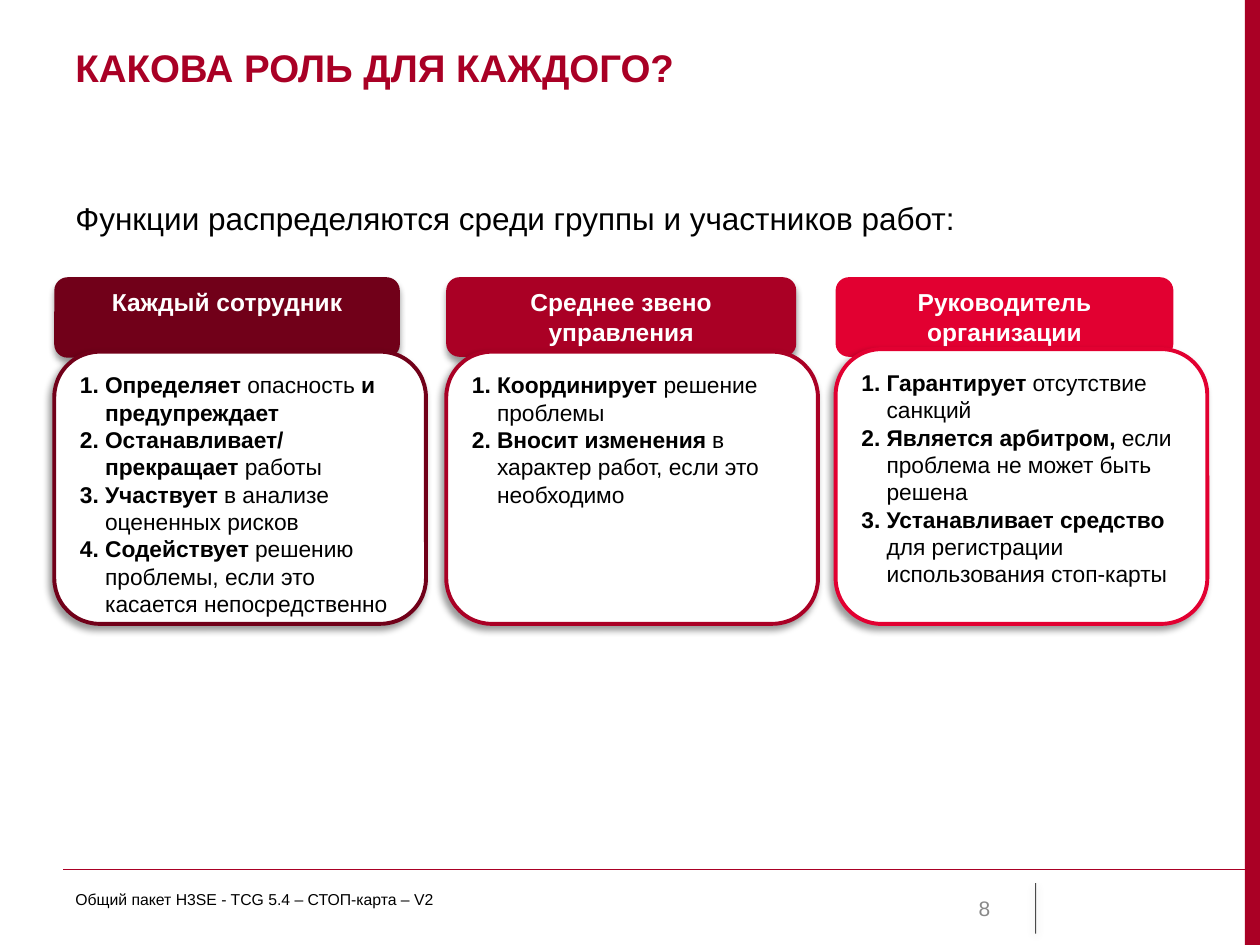
from lxml.etree import SubElement
from pptx import Presentation
from pptx.dml.color import RGBColor
from pptx.enum.shapes import MSO_CONNECTOR as Connector, MSO_SHAPE as Shape
from pptx.enum.text import MSO_ANCHOR as Anchor, PP_ALIGN as Align
from pptx.oxml.ns import qn
from pptx.util import Pt

FONT = "Arial"
CRIMSON = "AA0025"
BODY_WIDTH, CARD_BOTTOM = 212.4, 356.5

CARDS = [
    {"left": 31, "header": (Shape.FLOWCHART_ALTERNATE_PROCESS, 197.5, 46),
     "body_top": 201, "color": "710019", "header_shadow": True,
     "title": "Каждый сотрудник",
     "items": [
         [("Определяет", True), (" опасность ", False), ("и предупреждает", True)],
         [("Останавливает/прекращает ", True), ("работы", False)],
         [("Участвует ", True), ("в анализе оцененных рисков", False)],
         [("Содействует", True),
          (" решению проблемы, если это касается непосредственно", False)]]},
    {"left": 255, "header": (Shape.ROUNDED_RECTANGLE, 200, 45.5),
     "body_top": 201, "color": CRIMSON, "header_shadow": True,
     "title": "Среднее звено управления",
     "items": [
         [("Координирует ", True), ("решение проблемы", False)],
         [("Вносит изменения ", True),
          ("в характер работ, если это необходимо", False)]]},
    {"left": 477.5, "header": (Shape.ROUNDED_RECTANGLE, 193, 45.5),
     "body_top": 199.5, "color": "E20031", "header_shadow": False,
     "title": "Руководитель организации",
     "items": [
         [("Гарантирует", True), (" отсутствие санкций", False)],
         [("Является арбитром, ", True),
          ("если проблема не может быть решена", False)],
         [("Устанавливает средство ", True),
          ("для регистрации использования стоп-карты", False)]]},
]


def rgb(color):
    return RGBColor.from_string(color)


def set_font(para, size, color, bold=False):
    font = para.font
    font.name, font.size, font.bold = FONT, Pt(size), bold
    font.color.rgb = rgb(color)


def add_shadow(shape, opacity, blur, distance, angle):
    effects = shape._element.spPr.find(qn("a:effectLst"))
    shadow = SubElement(effects, qn("a:outerShdw"), blurRad=str(Pt(blur)),
                        dist=str(Pt(distance)), dir=str(angle * 60000),
                        rotWithShape="0")
    black = SubElement(shadow, qn("a:srgbClr"), val="000000")
    SubElement(black, qn("a:alpha"), val=str(opacity * 1000))


def add_panel(shapes, kind, left, top, width, height, fill, line=None):
    panel = shapes.add_shape(kind, Pt(left), Pt(top), Pt(width), Pt(height))
    panel.shadow.inherit = False
    panel.fill.solid()
    panel.fill.fore_color.rgb = rgb(fill)
    if line:
        panel.line.color.rgb = rgb(line)
        panel.line.width = Pt(2.25)
    else:
        panel.line.fill.background()
    panel.text_frame.word_wrap = True
    panel.text_frame.vertical_anchor = Anchor.TOP
    return panel


def add_rule(shapes, start, end, color, width):
    rule = shapes.add_connector(Connector.STRAIGHT, *map(Pt, start + end))
    rule.line.color.rgb = rgb(color)
    rule.line.width = Pt(width)
    SubElement(rule._element.spPr, qn("a:effectLst"))
    return rule


def add_label(shapes, text, left, top, width, height, size, color,
              bold=False, align=Align.LEFT, anchor=Anchor.TOP):
    box = shapes.add_textbox(Pt(left), Pt(top), Pt(width), Pt(height))
    frame = box.text_frame
    frame.word_wrap = True
    frame.vertical_anchor = anchor
    para = frame.paragraphs[0]
    para.text, para.alignment = text, align
    set_font(para, size, color, bold)


def add_numbered_list(frame, items):
    for index, item in enumerate(items):
        para = frame.add_paragraph() if index else frame.paragraphs[0]
        para.alignment = Align.LEFT
        properties = para._p.get_or_add_pPr()
        properties.set("marL", str(Pt(14.4)))
        properties.set("indent", str(-Pt(14.4)))
        SubElement(properties, qn("a:buAutoNum"), type="arabicPeriod")
        set_font(para, 13, "000000")
        for text, bold in item:
            span = para.add_run()
            span.text = text
            span.font.bold = bold


def add_card(slide, card):
    shapes = slide.shapes.add_group_shape().shapes
    left, top, color = card["left"], card["body_top"], card["color"]
    kind, width, height = card["header"]
    header = add_panel(shapes, kind, left, 158.4, width, height, color)
    if card["header_shadow"]:
        add_shadow(header, 40, 4, 3, 90)
    para = header.text_frame.paragraphs[0]
    para.text, para.alignment = card["title"], Align.CENTER
    set_font(para, 14, "FFFFFF", True)
    body = add_panel(shapes, Shape.ROUNDED_RECTANGLE, left, top, BODY_WIDTH,
                     CARD_BOTTOM - top, "FFFFFF", color)
    add_shadow(body, 40, 4, 3, 135)
    add_numbered_list(body.text_frame, card["items"])


def add_frame(shapes):
    add_panel(shapes, Shape.RECTANGLE, 711.4, 0, 8.6, 540, CRIMSON)
    add_rule(shapes, (36, 496.8), (720, 496.8), CRIMSON, 0.75)
    divider = add_rule(shapes, (591.8, 504.7), (591.8, 533.5), "000000", 0.5)
    tint = divider._element.spPr.find(".//" + qn("a:srgbClr"))
    SubElement(tint, qn("a:alpha"), val="70000")
    add_shadow(divider, 38, 5, 1.6, 90)


def main():
    deck = Presentation()
    deck.slide_width, deck.slide_height = Pt(720), Pt(540)
    slide = deck.slides.add_slide(deck.slide_layouts[6])
    shapes = slide.shapes
    add_frame(shapes)
    add_label(shapes, "КАКОВА РОЛЬ ДЛЯ КАЖДОГО?", 36, 21.6, 647, 50, 22,
              "A90025", bold=True)
    add_label(shapes, "8", 516, 504.7, 57, 28.8, 12, "898989",
              align=Align.RIGHT, anchor=Anchor.MIDDLE)
    for card in CARDS:
        add_card(slide, card)
    add_label(shapes, "Функции распределяются среди группы и участников работ:",
              36, 110.2, 654.5, 29, 18, "000000")
    add_label(shapes, "Общий пакет H3SE - TCG 5.4 – СТОП-карта – V2",
              36, 504.7, 437.8, 28.8, 9, "000000")
    deck.save("out.pptx")


if __name__ == "__main__":
    main()
